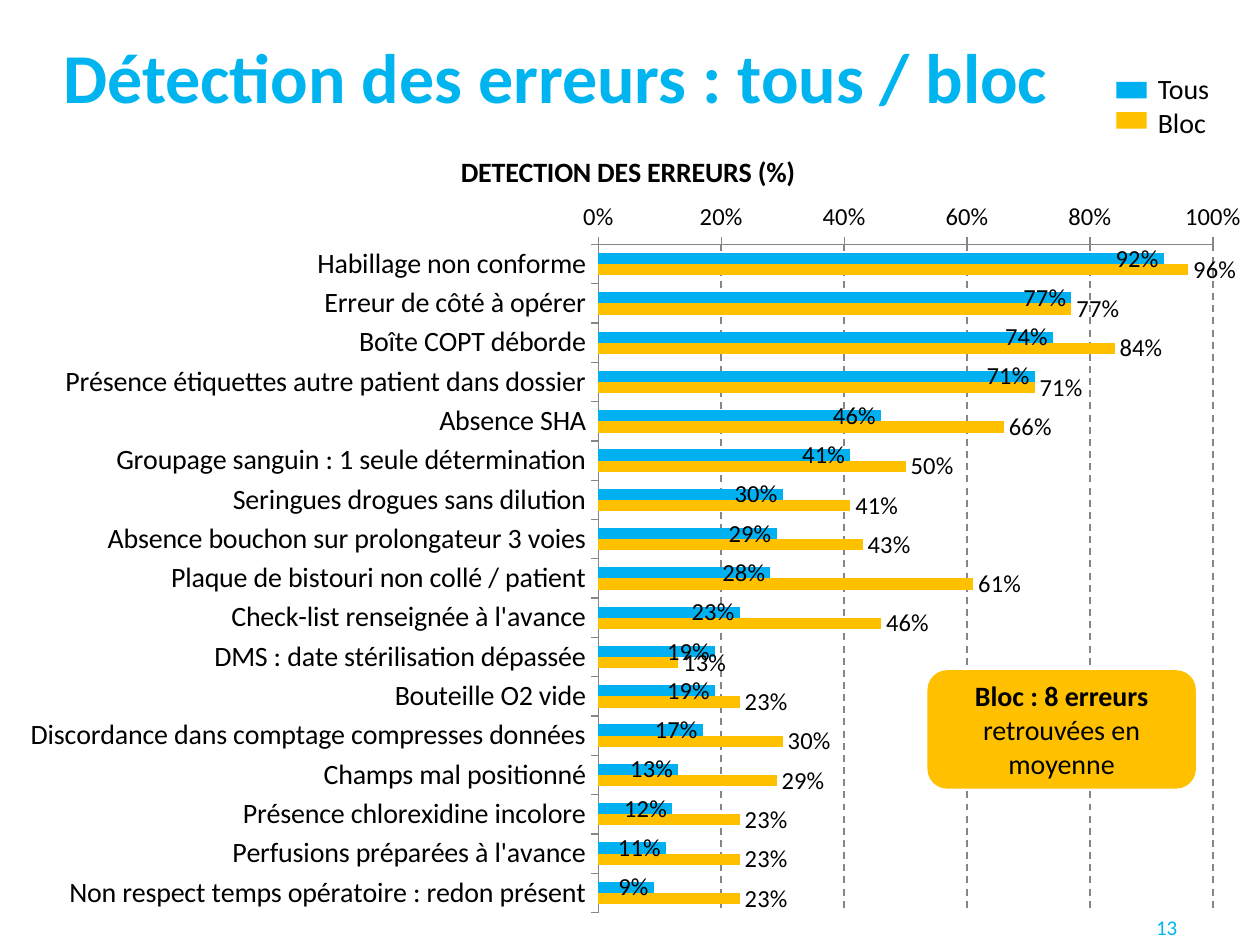
"""Build the slide comparing error detection for all staff and for the theatre."""
from lxml import etree
from pptx import Presentation
from pptx.chart.data import CategoryChartData
from pptx.dml.color import RGBColor
from pptx.enum.chart import XL_CHART_TYPE, XL_LABEL_POSITION, XL_TICK_MARK
from pptx.enum.dml import MSO_LINE
from pptx.enum.shapes import MSO_SHAPE
from pptx.enum.text import MSO_ANCHOR, PP_ALIGN
from pptx.util import Pt

BARS = XL_CHART_TYPE.BAR_CLUSTERED
IN_END, OUT_END = XL_LABEL_POSITION.INSIDE_END, XL_LABEL_POSITION.OUTSIDE_END
OUT = XL_TICK_MARK.OUTSIDE
DASH = MSO_LINE.DASH
RECT, ROUND = MSO_SHAPE.RECTANGLE, MSO_SHAPE.ROUNDED_RECTANGLE
TOP, MID = MSO_ANCHOR.TOP, MSO_ANCHOR.MIDDLE
LEFT, MIDDLE, RIGHT = PP_ALIGN.LEFT, PP_ALIGN.CENTER, PP_ALIGN.RIGHT

BLACK = RGBColor(0, 0, 0)
GREY = RGBColor(0x86, 0x86, 0x86)
BLUE = RGBColor(0x00, 0xB0, 0xF0)
SKY = RGBColor(0x00, 0xB5, 0xEF)
GOLD = RGBColor(0xFF, 0xC0, 0x00)
FACE = "Calibri"

TITLE = "Détection des erreurs : tous / bloc"
HEAD = "DETECTION DES ERREURS (%)"
PAGE = "13"
NOTE = [("Bloc : 8 erreurs ", True), ("retrouvées en moyenne", False)]
GROUPS = [("Tous", BLUE, IN_END), ("Bloc", GOLD, OUT_END)]
ROWS = [
    ("Habillage non conforme", 0.92, 0.96),
    ("Erreur de côté à opérer", 0.77, 0.77),
    ("Boîte COPT déborde", 0.74, 0.84),
    ("Présence étiquettes autre patient dans dossier", 0.71, 0.71),
    ("Absence SHA", 0.46, 0.66),
    ("Groupage sanguin : 1 seule détermination", 0.41, 0.50),
    ("Seringues drogues sans dilution", 0.30, 0.41),
    ("Absence bouchon sur prolongateur 3 voies", 0.29, 0.43),
    ("Plaque de bistouri non collé / patient", 0.28, 0.61),
    ("Check-list renseignée à l'avance", 0.23, 0.46),
    ("DMS : date stérilisation dépassée", 0.19, 0.13),
    ("Bouteille O2 vide", 0.19, 0.23),
    ("Discordance dans comptage compresses données", 0.17, 0.30),
    ("Champs mal positionné", 0.13, 0.29),
    ("Présence chlorexidine incolore", 0.12, 0.23),
    ("Perfusions préparées à l'avance", 0.11, 0.23),
    ("Non respect temps opératoire : redon présent", 0.09, 0.23),
]
PLOT = {"layoutTarget": "inner", "xMode": "edge", "yMode": "edge",
        "x": 0.48, "y": 0.15, "w": 0.39, "h": 0.83}
PLOT.update(x=0.481, y=0.149, w=0.393, h=0.831)
CHART_NS = "http://schemas.openxmlformats.org/drawingml/2006/chart"


def style(font, size, color=BLACK, bold=False):
    for key, val in {"name": FACE, "size": Pt(size), "bold": bold}.items():
        setattr(font, key, val)
    font.color.rgb = color


def write(shape, lines, size, color=BLACK, align=LEFT, anchor=TOP, wrap=True):
    frame = shape.text_frame
    frame.word_wrap = wrap
    frame.vertical_anchor = anchor
    for i, runs in enumerate(lines):
        para = frame.add_paragraph() if i else frame.paragraphs[0]
        para.alignment = align
        for text, bold in runs:
            run = para.add_run()
            run.text = text
            style(run.font, size, color, bold)


def block(slide, kind, box, color):
    shape = slide.shapes.add_shape(kind, *map(Pt, box))
    shape.shadow.inherit = False
    shape.fill.solid()
    shape.fill.fore_color.rgb = color
    shape.line.fill.background()
    return shape


def place(chart):
    area = chart.plots[0]._element.getparent()
    for old in area.findall(f"{{{CHART_NS}}}layout"):
        area.remove(old)
    layout = etree.Element(f"{{{CHART_NS}}}layout")
    manual = etree.SubElement(layout, f"{{{CHART_NS}}}manualLayout")
    for key, val in PLOT.items():
        etree.SubElement(manual, f"{{{CHART_NS}}}{key}", val=str(val))
    area.insert(0, layout)


def draw(slide):
    names, *cols = zip(*ROWS)
    data = CategoryChartData(number_format="0%")
    data.categories = names
    for (name, _, _), vals in zip(GROUPS, cols):
        data.add_series(name, vals)
    box = map(Pt, (-87.8, 71.3, 893.5, 459.4))
    chart = slide.shapes.add_chart(BARS, *box, data).chart
    style(chart.font, 10)
    chart.has_legend = False
    chart.has_title = True
    run = chart.chart_title.text_frame.paragraphs[0].add_run()
    run.text = HEAD
    style(run.font, 16, bold=True)
    place(chart)

    plot = chart.plots[0]
    for key, val in {"gap_width": 150, "overlap": 0,
                     "vary_by_categories": False}.items():
        setattr(plot, key, val)
    for bars, (_, color, pos) in zip(plot.series, GROUPS):
        bars.format.fill.solid()
        bars.format.fill.fore_color.rgb = color
        tags = bars.data_labels
        for key, val in {"show_value": True, "position": pos,
                         "number_format": "0%",
                         "number_format_is_linked": False}.items():
            setattr(tags, key, val)
        style(tags.font, 14)

    cat, val = chart.category_axis, chart.value_axis
    cat.reverse_order = True
    for key, num in {"minimum_scale": 0, "maximum_scale": 1,
                     "major_unit": 0.2, "has_major_gridlines": True}.items():
        setattr(val, key, num)
    val.tick_labels.number_format = "0%"
    val.tick_labels.number_format_is_linked = False
    for axis, size in ((cat, 16), (val, 14)):
        axis.major_tick_mark = OUT
        style(axis.tick_labels.font, size)
        axis.format.line.color.rgb = GREY
        axis.format.line.width = Pt(0.75)
    grid = val.major_gridlines.format.line
    grid.color.rgb = GREY
    grid.width = Pt(1)
    grid.dash_style = DASH


def main():
    deck = Presentation()
    deck.slide_width, deck.slide_height = Pt(720), Pt(540)
    slide = deck.slides.add_slide(deck.slide_layouts[6])
    draw(slide)

    def text(box, lines, *args, **opts):
        shape = slide.shapes.add_textbox(*map(Pt, box))
        write(shape, [[line] for line in lines], *args, **opts)

    text((29.2, 9.4, 677.2, 67), [(TITLE, True)], 40, SKY, anchor=MID)
    text((638, 519, 41.8, 23), [(PAGE, False)], 12, SKY, RIGHT)
    note = block(slide, ROUND, (530, 383, 153.4, 67.7), GOLD)
    write(note, [NOTE], 16, align=MIDDLE, anchor=MID)
    text((654.5, 37.4, 44.6, 46), [(name, False) for name, _, _ in GROUPS],
         16, wrap=False)
    for i, (_, color, _) in enumerate(GROUPS):
        block(slide, RECT, (638, 46.8 + 17.3 * i, 17.3, 9.4), color)
    deck.save("out.pptx")


if __name__ == "__main__":
    main()
